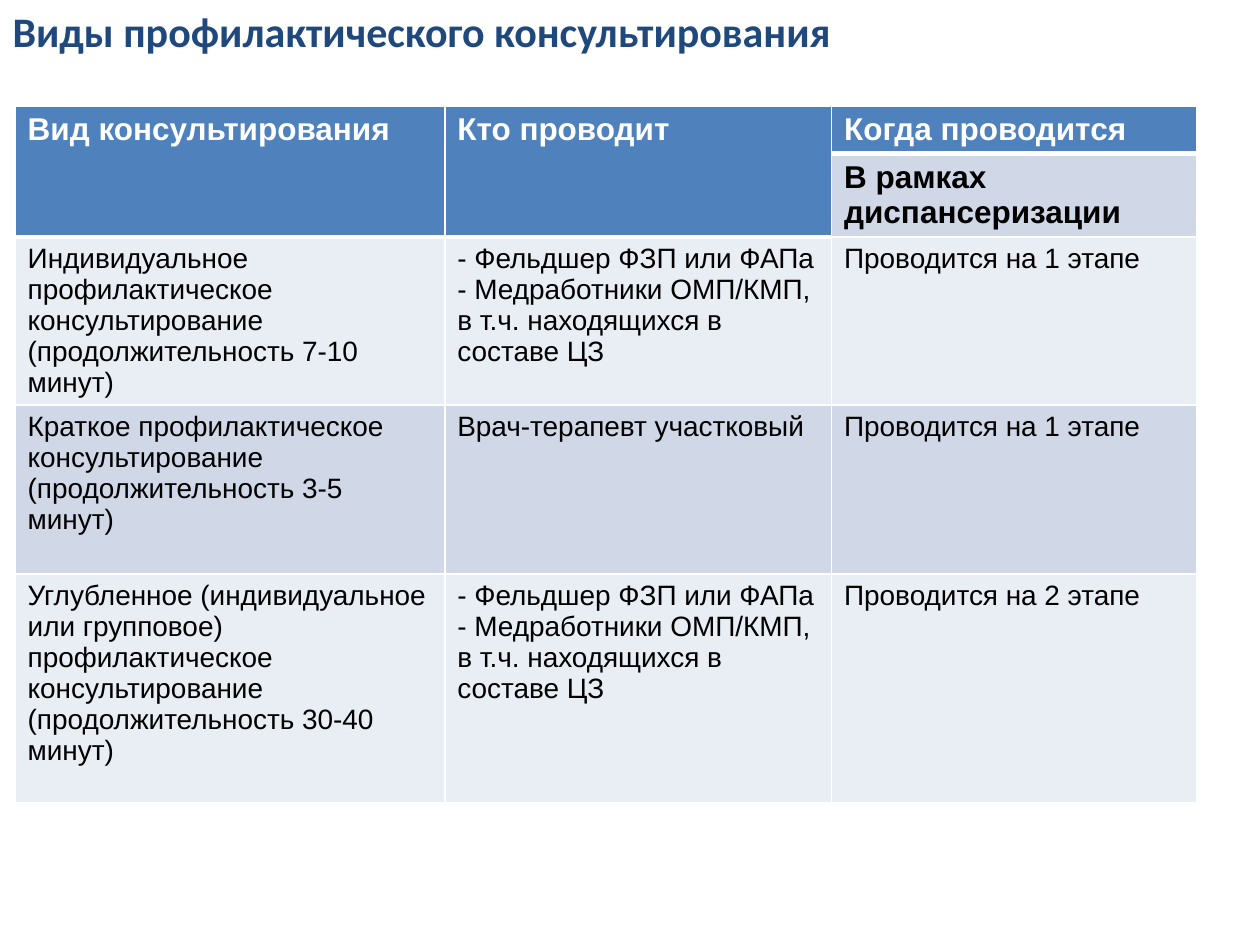
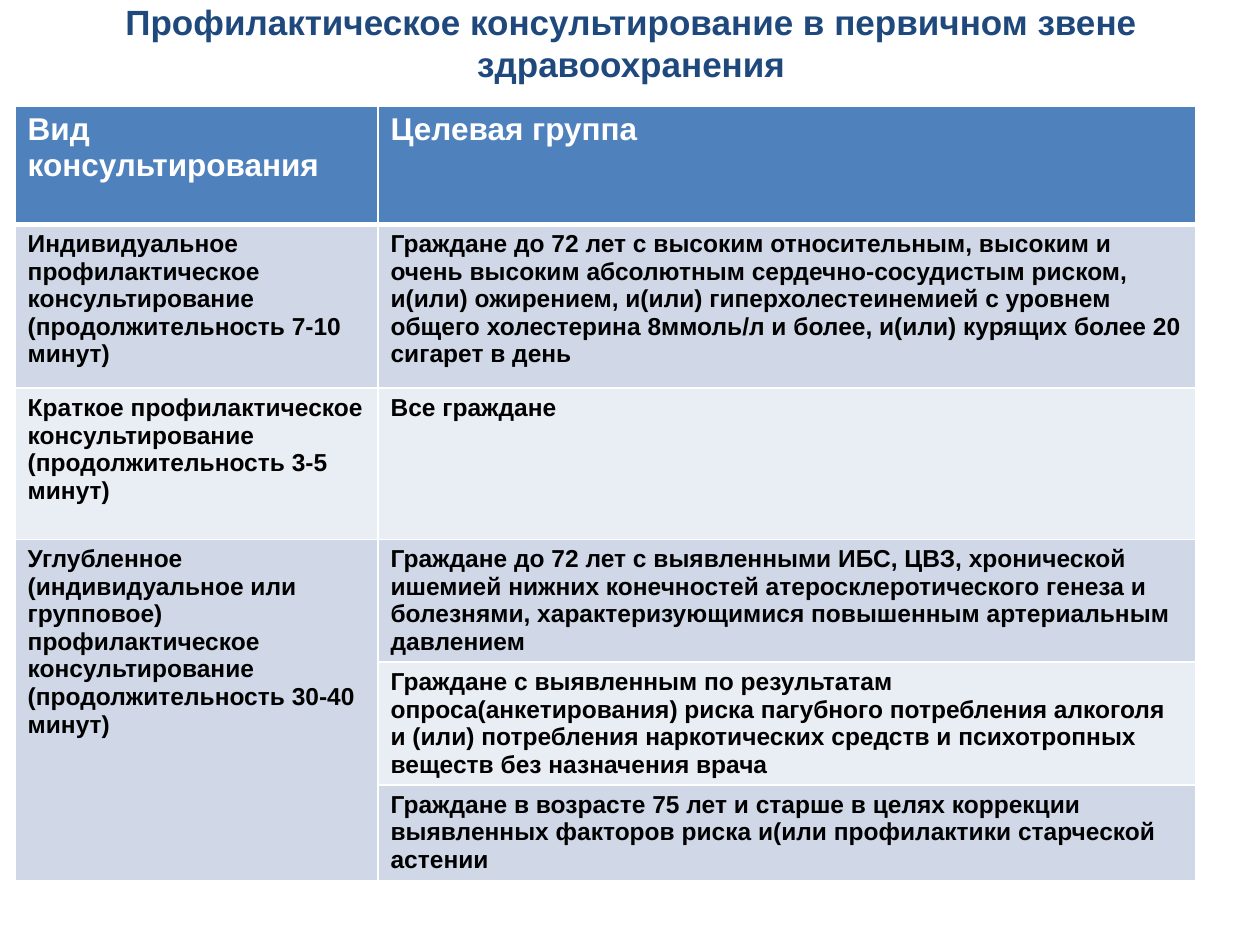
from dataclasses import dataclass

from lxml import etree
from pptx import Presentation
from pptx.dml.color import RGBColor
from pptx.enum.text import MSO_ANCHOR, MSO_AUTO_SIZE, PP_ALIGN
from pptx.oxml.ns import qn
from pptx.util import Inches, Pt

LEFT, CENTER = PP_ALIGN.LEFT, PP_ALIGN.CENTER
TOP = MSO_ANCHOR.TOP
NO_FIT = MSO_AUTO_SIZE.NONE
TITLE_ONLY = 5


@dataclass(frozen=True)
class TextStyle:
    size: int
    color: str
    bold: bool = True
    font: str = "Arial"


@dataclass(frozen=True)
class Theme:
    header_fill: str = "4F81BD"
    light_band: str = "E9EDF4"
    dark_band: str = "D0D8E8"
    grid: str = "FFFFFF"
    thin: int = 1
    thick: int = 3
    large_title: TextStyle = TextStyle(24, "1F497D", font="Calibri")
    title: TextStyle = TextStyle(20, "1F497D")
    header: TextStyle = TextStyle(18, "FFFFFF")
    subheader: TextStyle = TextStyle(18, "000000")
    body: TextStyle = TextStyle(16, "000000", bold=False)
    strong_body: TextStyle = TextStyle(14, "000000")


THEME = Theme()


@dataclass(frozen=True)
class Title:
    text: str
    style: TextStyle
    box: tuple[float, float, float, float]
    align: PP_ALIGN
    margin_top: float


@dataclass(frozen=True)
class Row:
    height: float
    style: TextStyle
    cells: tuple[str | None, ...]


@dataclass(frozen=True)
class Page:
    title: Title
    widths: tuple[float, ...]
    rows: tuple[Row, ...]


INDIVIDUAL = "Индивидуальное профилактическое консультирование\n(продолжительность 7-10 минут)"
BRIEF = "Краткое профилактическое консультирование\n(продолжительность 3-5 минут)"
INTENSIVE = (
    "Углубленное (индивидуальное или групповое) профилактическое консультирование\n"
    "(продолжительность 30-40 минут)"
)
STAFF = "- Фельдшер ФЗП или ФАПа\n- Медработники ОМП/КМП, в т.ч. находящихся в составе ЦЗ"
FIRST_STAGE = "Проводится на 1 этапе"

PAGES = (
    Page(
        Title("Виды профилактического консультирования", THEME.large_title,
              (0, -0.01, 9.69, 0.5), LEFT, 0.05),
        (3.41, 3.07, 2.9),
        (
            Row(0.37, THEME.header,
                ("Вид консультирования", "Кто проводит", "Когда проводится")),
            Row(0.66, THEME.subheader, (None, None, "В рамках диспансеризации")),
            Row(1.33, THEME.body, (INDIVIDUAL, STAFF, FIRST_STAGE)),
            Row(1.34, THEME.body, (BRIEF, "Врач-терапевт участковый", FIRST_STAGE)),
            Row(1.82, THEME.body, (INTENSIVE, STAFF, "Проводится на 2 этапе")),
        ),
    ),
    Page(
        Title("Профилактическое консультирование в первичном звене здравоохранения",
              THEME.title, (0.51, 0, 9, 1.25), CENTER, 0),
        (2.88, 6.49),
        (
            Row(0.94, THEME.header, ("Вид консультирования", "Целевая группа")),
            Row(1.3, THEME.strong_body, (
                INDIVIDUAL,
                "Граждане до 72 лет с высоким относительным, высоким и очень высоким "
                "абсолютным сердечно-сосудистым риском, и(или) ожирением, и(или) "
                "гиперхолестеинемией с уровнем общего холестерина 8ммоль/л и более, "
                "и(или) курящих более 20 сигарет в день")),
            Row(1.2, THEME.strong_body, (BRIEF, "Все граждане")),
            Row(0.97, THEME.strong_body, (
                INTENSIVE,
                "Граждане до 72 лет с выявленными ИБС, ЦВЗ, хронической ишемией нижних "
                "конечностей атеросклеротического генеза и болезнями, "
                "характеризующимися повышенным артериальным давлением")),
            Row(0.97, THEME.strong_body, (
                None,
                "Граждане с выявленным по результатам опроса(анкетирования) риска "
                "пагубного потребления алкоголя и (или) потребления наркотических "
                "средств и психотропных веществ без назначения врача")),
            Row(0.76, THEME.strong_body, (
                None,
                "Граждане в возрасте 75 лет и старше в целях коррекции выявленных "
                "факторов риска и(или профилактики старческой астении")),
        ),
    ),
)


def set_all(target, values: dict) -> None:
    for name, value in values.items():
        setattr(target, name, value)


def write_text(frame, text: str, style: TextStyle, align: PP_ALIGN = LEFT) -> None:
    frame.text = text
    for para in frame.paragraphs:
        para.alignment = align
        for span in para.runs:
            set_all(span.font, {"name": style.font, "size": Pt(style.size), "bold": style.bold})
            span.font.color.rgb = RGBColor.from_string(style.color)


def draw_title(slide, title: Title) -> None:
    box = slide.shapes.title
    sides = ("left", "top", "width", "height")
    set_all(box, {side: Inches(value) for side, value in zip(sides, title.box)})
    set_all(box.text_frame, {
        "word_wrap": True,
        "auto_size": NO_FIT,
        "vertical_anchor": TOP,
        "margin_top": Inches(title.margin_top),
    })
    write_text(box.text_frame, title.text, title.style, title.align)


def draw_borders(cell, widths: dict[str, int]) -> None:
    properties = cell._tc.get_or_add_tcPr()
    for side, width in widths.items():
        line = etree.SubElement(properties, qn(f"a:{side}"), w=str(Pt(width)))
        fill = etree.SubElement(line, qn("a:solidFill"))
        etree.SubElement(fill, qn("a:srgbClr"), val=THEME.grid)


def origin_row(rows: tuple[Row, ...], row: int, column: int) -> int:
    while rows[row].cells[column] is None:
        row -= 1
    return row


def draw_cell(table, rows: tuple[Row, ...], row: int, column: int) -> None:
    cell = table.cell(row, column)
    origin = origin_row(rows, row, column)
    below_header = row > 0 and origin_row(rows, row - 1, column) == 0
    draw_borders(cell, {
        "lnL": THEME.thin,
        "lnR": THEME.thin,
        "lnT": THEME.thick if below_header else THEME.thin,
        "lnB": THEME.thick if origin == 0 else THEME.thin,
    })
    band = THEME.dark_band if origin % 2 else THEME.light_band
    cell.fill.solid()
    cell.fill.fore_color.rgb = RGBColor.from_string(THEME.header_fill if origin == 0 else band)
    if origin == row:
        write_text(cell.text_frame, rows[row].cells[column], rows[row].style)
    else:
        end_of_merge = row + 1 == len(rows) or rows[row + 1].cells[column] is not None
        if end_of_merge:
            table.cell(origin, column).merge(cell)


def draw_table(slide, page: Page) -> None:
    rows, widths = page.rows, page.widths
    table = slide.shapes.add_table(
        len(rows), len(widths), Inches(0.12), Inches(0.84),
        Inches(sum(widths)), Inches(sum(row.height for row in rows)),
    ).table
    table.horz_banding = False
    for column, width in zip(table.columns, widths):
        column.width = Inches(width)
    for index, row in enumerate(rows):
        table.rows[index].height = Inches(row.height)
        for column in range(len(widths)):
            draw_cell(table, rows, index, column)


def main() -> None:
    deck = Presentation()
    set_all(deck, {"slide_width": Inches(10), "slide_height": Inches(7.5)})
    for page in PAGES:
        slide = deck.slides.add_slide(deck.slide_layouts[TITLE_ONLY])
        draw_title(slide, page.title)
        draw_table(slide, page)
    deck.save("out.pptx")


if __name__ == "__main__":
    main()
